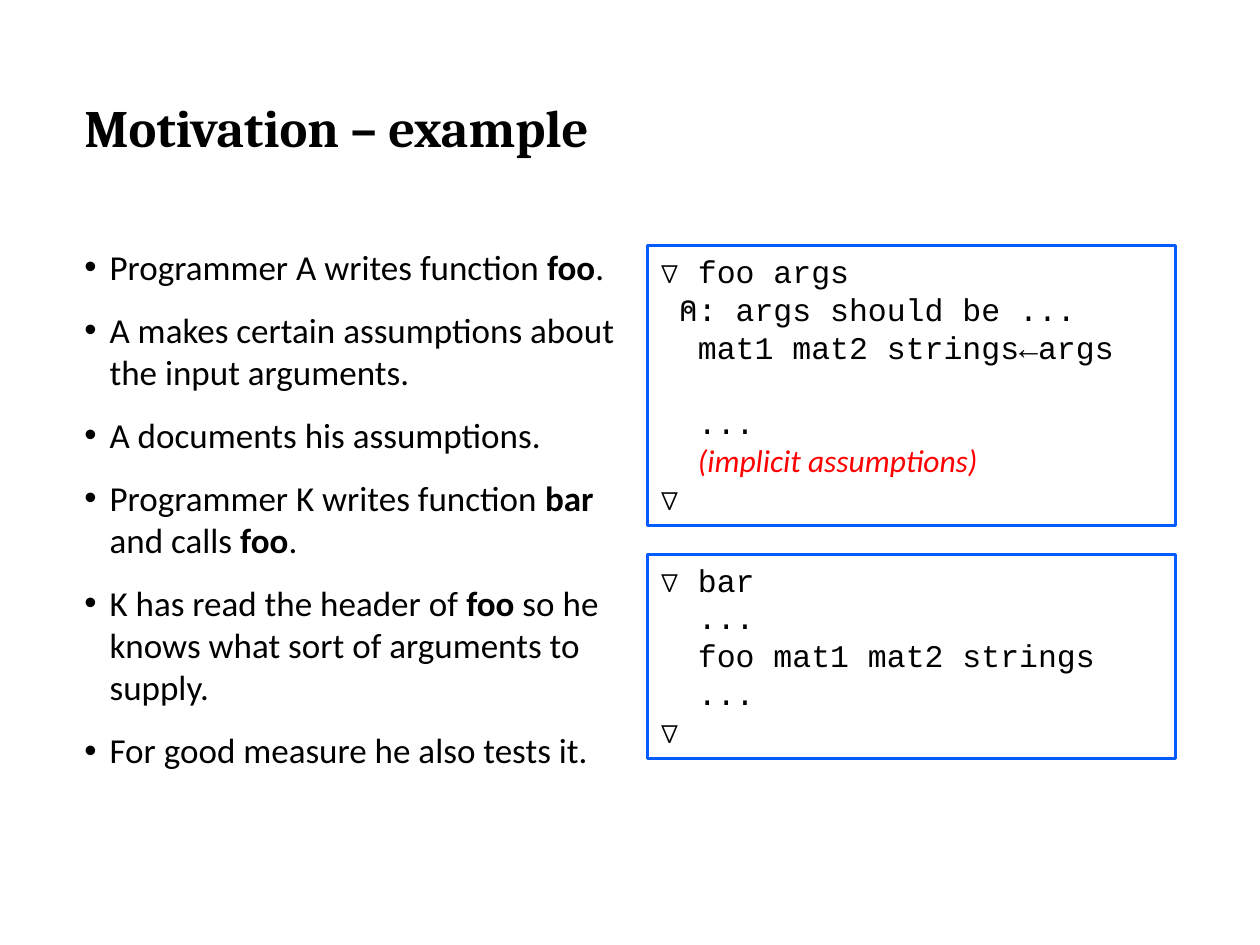
from lxml.etree import SubElement
from pptx import Presentation
from pptx.dml.color import RGBColor as Color
from pptx.enum.shapes import MSO_SHAPE as Preset
from pptx.enum.text import MSO_ANCHOR as Anchor, MSO_AUTO_SIZE as AutoSize, PP_ALIGN as Align
from pptx.oxml.ns import qn
from pptx.util import Inches, Pt

TITLE = "Motivation – example"

# Each line is a list of (text, style) spans.
BULLETS = [
    [("Programmer A writes function ", "body"), ("foo", "strong"), (".", "body")],
    [("A makes certain assumptions about the input arguments.", "body")],
    [("A documents his assumptions.", "body")],
    [("Programmer K writes function ", "body"), ("bar", "strong"),
     (" and calls ", "body"), ("foo", "strong"), (".", "body")],
    [("K has read the header of ", "body"), ("foo", "strong"),
     (" so he knows what sort of arguments to supply.", "body")],
    [("For good measure he also tests it.", "body")],
]
FOO_CODE = [
    [("∇ foo args", "code")],
    [(" ⍝: args should be ...", "code")],
    [("  mat1 mat2 strings←args", "code")],
    [("", "code")],
    [("  ...", "code")],
    [("  ", "code"), ("(implicit assumptions)", "remark")],
    [("∇", "code")],
]
BAR_CODE = [[(line, "code")] for line in
            ("∇ bar", "  ...", "  foo mat1 mat2 strings", "  ...", "∇")]

BLACK, RED = Color.from_string("000000"), Color.from_string("FF0000")
THEME = {
    "title": {"name": "Cambria", "size": Pt(30), "bold": True, "color": BLACK},
    "body": {"name": "Calibri", "size": Pt(20), "bold": False, "color": BLACK},
    "strong": {"name": "Calibri", "size": Pt(20), "bold": True, "color": BLACK},
    "code": {"name": "Courier New", "size": Pt(18), "color": BLACK},
    "remark": {"name": "Calibri", "size": Pt(18), "italic": True, "color": RED},
    "panel_fill": Color.from_string("FFFFFF"),
    "panel_line": Color.from_string("025BFF"),
}

WIDTH, HEIGHT = 10, 7.5
MARGIN = 0.67
COLUMN = 4.19
RIGHT = WIDTH - MARGIN - COLUMN
BODY_TOP = 1.95
FOO_HEIGHT, BAR_HEIGHT, PANEL_GAP = 2.22, 1.62, 0.23
INDENT = 0.2


def set_all(target, values):
    for name, value in values.items():
        setattr(target, name, value)


def write(frame, lines, **paragraph_format):
    """Fill the frame with one paragraph per line and yield each paragraph."""
    for index, line in enumerate(lines):
        para = frame.add_paragraph() if index else frame.paragraphs[0]
        set_all(para, {"alignment": Align.LEFT, **paragraph_format})
        if not index:
            para.space_before = Pt(0)
        for text, style in line:
            span = para.add_run()
            span.text = text
            font = dict(THEME[style])
            span.font.color.rgb = font.pop("color")
            set_all(span.font, font)
        yield para


def add_text(page, left, top, width, height):
    frame = page.shapes.add_textbox(*map(Inches, (left, top, width, height))).text_frame
    set_all(frame, {"word_wrap": True, "vertical_anchor": Anchor.TOP,
                    "margin_left": 0, "margin_top": 0,
                    "margin_right": 0, "margin_bottom": 0})
    return frame


def add_bullet(para):
    properties = para._p.get_or_add_pPr()
    properties.set("marL", str(Inches(INDENT)))
    properties.set("indent", str(-Inches(INDENT)))
    SubElement(properties, qn("a:buFont"), typeface="Arial")
    SubElement(properties, qn("a:buChar"), char="•")


def add_code_panel(page, top, height, lines):
    box = page.shapes.add_shape(Preset.RECTANGLE,
                                *map(Inches, (RIGHT, top, COLUMN, height)))
    box.shadow.inherit = False
    box.fill.solid()
    box.fill.fore_color.rgb = THEME["panel_fill"]
    box.line.color.rgb = THEME["panel_line"]
    box.line.width = Pt(2)
    set_all(box.text_frame, {"word_wrap": True, "vertical_anchor": Anchor.TOP,
                             "auto_size": AutoSize.SHAPE_TO_FIT_TEXT})
    list(write(box.text_frame, lines))


def main():
    deck = Presentation()
    deck.slide_width, deck.slide_height = Inches(WIDTH), Inches(HEIGHT)
    page = deck.slides.add_slide(deck.slide_layouts[6])

    title = add_text(page, MARGIN, 0.8, WIDTH - 2 * MARGIN, 0.84)
    list(write(title, [[(TITLE, "title")]], line_spacing=Pt(33)))

    body = add_text(page, MARGIN, BODY_TOP, 4.23, 4.33)
    for para in write(body, BULLETS, space_before=Pt(6), space_after=Pt(6)):
        add_bullet(para)

    top = BODY_TOP
    for height, lines in ((FOO_HEIGHT, FOO_CODE), (BAR_HEIGHT, BAR_CODE)):
        add_code_panel(page, top, height, lines)
        top += height + PANEL_GAP

    deck.save("out.pptx")


if __name__ == "__main__":
    main()
